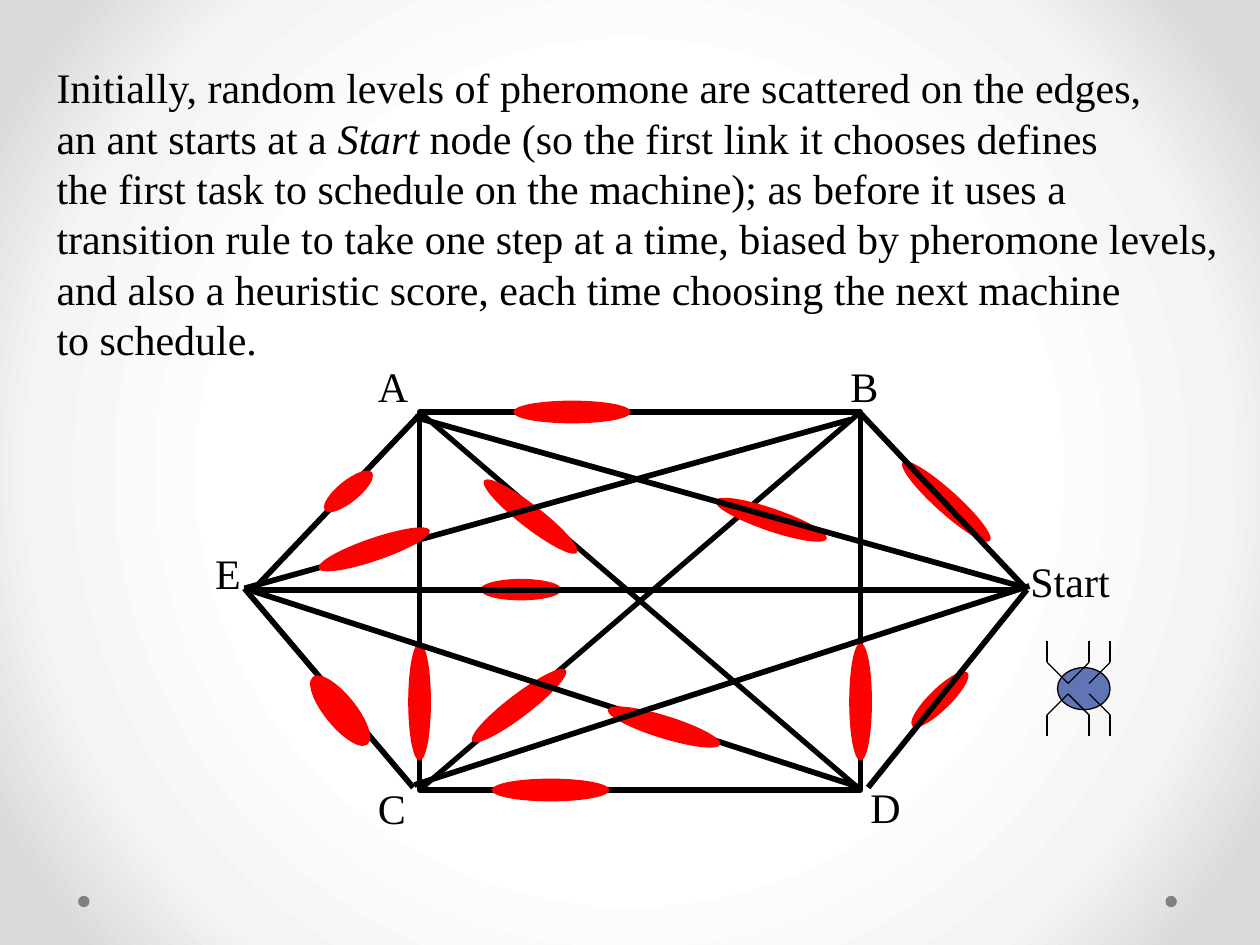
from lxml.etree import SubElement
from pptx import Presentation
from pptx.dml.color import RGBColor
from pptx.enum.shapes import MSO_CONNECTOR as Connector, MSO_SHAPE as Shape
from pptx.enum.text import MSO_AUTO_SIZE as AutoSize
from pptx.oxml import parse_xml
from pptx.oxml.ns import qn
from pptx.util import Inches, Pt

COLUMNS, ROWS = 100, 75
BLACK, RED, BLUE, GREY = "000000", "FF0000", "6076B4", "808080"
FONT, TEXT_SIZE = "Times New Roman", 24
THIN, FRAME, EDGE = 0.75, 3, 3.25
DRAWING = "http://schemas.openxmlformats.org/drawingml/2006/main"


def color(value):
    return RGBColor.from_string(value)


class SlideBuilder:
    def __init__(self, presentation):
        self.slide = presentation.slides.add_slide(presentation.slide_layouts[6])
        self.column = presentation.slide_width / COLUMNS
        self.row = presentation.slide_height / ROWS

    def place(self, left, top, width, height):
        return (round(left * self.column), round(top * self.row),
                round(width * self.column), round(height * self.row))

    def background(self, stops):
        self.slide.background.fill.solid()
        properties = self.slide.element.xpath("p:cSld/p:bg/p:bgPr")[0]
        stop_list = "".join(
            f'<a:gs pos="{share * 1000}"><a:srgbClr val="{value}"/></a:gs>'
            for share, value in stops)
        gradient = parse_xml(
            f'<a:gradFill xmlns:a="{DRAWING}" rotWithShape="1"><a:gsLst>{stop_list}</a:gsLst>'
            '<a:path path="circle"><a:fillToRect l="50000" t="50000" r="50000" b="50000"/>'
            '</a:path></a:gradFill>')
        properties.replace(properties[0], gradient)

    def shape(self, kind, box, fill=None, line=None, weight=THIN, rotation=0, parent=None):
        shape = (parent or self.slide).shapes.add_shape(kind, *self.place(*box))
        shape.shadow.inherit = False
        shape.rotation = rotation
        if fill:
            shape.fill.solid()
            shape.fill.fore_color.rgb = color(fill)
        else:
            shape.fill.background()
        if line:
            shape.line.color.rgb = color(line)
            shape.line.width = Pt(weight)
        else:
            shape.line.fill.background()

    def ellipse(self, center, size, fill, line=None, rotation=0, parent=None):
        (x, y), (width, height) = center, size
        box = (x - width / 2, y - height / 2, width, height)
        self.shape(Shape.OVAL, box, fill, line, rotation=rotation, parent=parent)

    def pheromone(self, x, y, rotation=0, width=9.2, height=1.7):
        self.ellipse((x, y), (width, height), RED, RED, rotation)

    def line(self, start, end, weight, parent=None):
        points = self.place(*start, *end)
        connector = (parent or self.slide).shapes.add_connector(Connector.STRAIGHT, *points)
        connector.line.color.rgb = color(BLACK)
        connector.line.width = Pt(weight)
        SubElement(connector.element.spPr, qn("a:effectLst"))

    def text(self, box, lines):
        frame = self.slide.shapes.add_textbox(*self.place(*box)).text_frame
        frame.word_wrap = False
        frame.auto_size = AutoSize.SHAPE_TO_FIT_TEXT
        for index, runs in enumerate(lines):
            paragraph = frame.paragraphs[0] if index == 0 else frame.add_paragraph()
            paragraph.font.name = FONT
            paragraph.font.size = Pt(TEXT_SIZE)
            paragraph.font.color.rgb = color(BLACK)
            for position, words in enumerate(runs):
                run = paragraph.add_run()
                run.text = words
                if position % 2:
                    run.font.italic = True

    def ant(self, left, top, step):
        group = self.slide.shapes.add_group_shape()
        middle = top + 2.25 * step
        self.ellipse((left + 1.75 * step, middle), (2.5 * step, 2 * step), BLUE, BLACK,
                     parent=group)
        for side in (-1, 1):
            hip_y, knee_y, foot_y = (middle + side * distance * step
                                     for distance in (0.25, 1.25, 2.25))
            for hip, knee in ((2, 3), (1, 2), (1, 0)):
                hip_x, knee_x = left + hip * step, left + knee * step
                self.line((hip_x, hip_y), (knee_x, knee_y), THIN, group)
                self.line((knee_x, knee_y), (knee_x, foot_y), THIN, group)


def main():
    presentation = Presentation()
    presentation.slide_width, presentation.slide_height = Inches(10), Inches(7.5)
    builder = SlideBuilder(presentation)
    builder.background([(50, "FFFFFF"), (76, "F4F4F4"), (92, "DADADA")])
    for x in (92.95, 6.65):
        builder.ellipse((x, 71.55), (0.9, 0.9), GREY)

    labels = {"A": (29, 28.1, 4.4), "B": (66.5, 28.1, 4.2), "C": (29, 61.6, 4.2),
              "D": (68.1, 61.5, 4.4), "E": (16.1, 43, 4), "Start": (80.8, 43.6, 8.3)}
    for label, (left, top, width) in labels.items():
        builder.text((left, top, width, 5), [[label]])

    left, top, right, bottom = 33.3, 32.7, 68.3, 62.7
    builder.shape(Shape.RECTANGLE, (left, top, right - left, bottom - top),
                  line=BLACK, weight=FRAME)
    builder.line((left, top), (right, bottom), FRAME)
    builder.line((left, bottom), (right, top), FRAME)
    builder.ant(83.1, 50.9, 1.67)
    for pheromone in ((43.7, bottom), (45.4, top), (41.2, 56, 322.7), (42.1, 41, 37.8),
                      (right, 55.7, 90), (left, 55.7, 90)):
        builder.pheromone(*pheromone)

    builder.text((3.5, 4.4, 95.8, 25.2), [
        ["Initially, random levels of pheromone are scattered on the edges,"],
        ["an ant starts at a ", "Start", " node (so the first link it chooses defines"],
        ["the first task to schedule on the machine); as before it uses a"],
        ["transition rule to take one step at a time, biased by pheromone levels,"],
        ["and also a heuristic score, each time choosing the next machine"],
        ["to schedule."]])

    node_e = (19.4, 46.7)
    for corner in ((32.8, 62.5), (68.3, 62.5), (67.5, 33.3)):
        builder.line(corner, node_e, EDGE)
    builder.line((20.2, 46.7), (33.6, 32.6), EDGE)
    for pheromone in ((27, 56.4, 51, 6.8, 2.4), (52.7, 57.7, 17.2), (29.7, 43.6, 161.1),
                      (27.65, 39, 141, 4.7, 1.6), (41.35, 46.8, 0, 6.3, 1.6),
                      (75.1, 39.8, 42), (61.2, 41.25, 18.9), (74.6, 55.5, 315.7, 6, 1.6)):
        builder.pheromone(*pheromone)
    for start, end in (((32.9, 62.3), (81.7, 46.5)), ((32.9, 33.1), (80.9, 46.5)),
                       ((81.5, 46.8), (68.1, 32.6)), ((68.9, 62.5), (81.5, 46.8)),
                       ((80.7, 46.8), (20.1, 46.8))):
        builder.line(start, end, EDGE)
    presentation.save("out.pptx")


if __name__ == "__main__":
    main()
